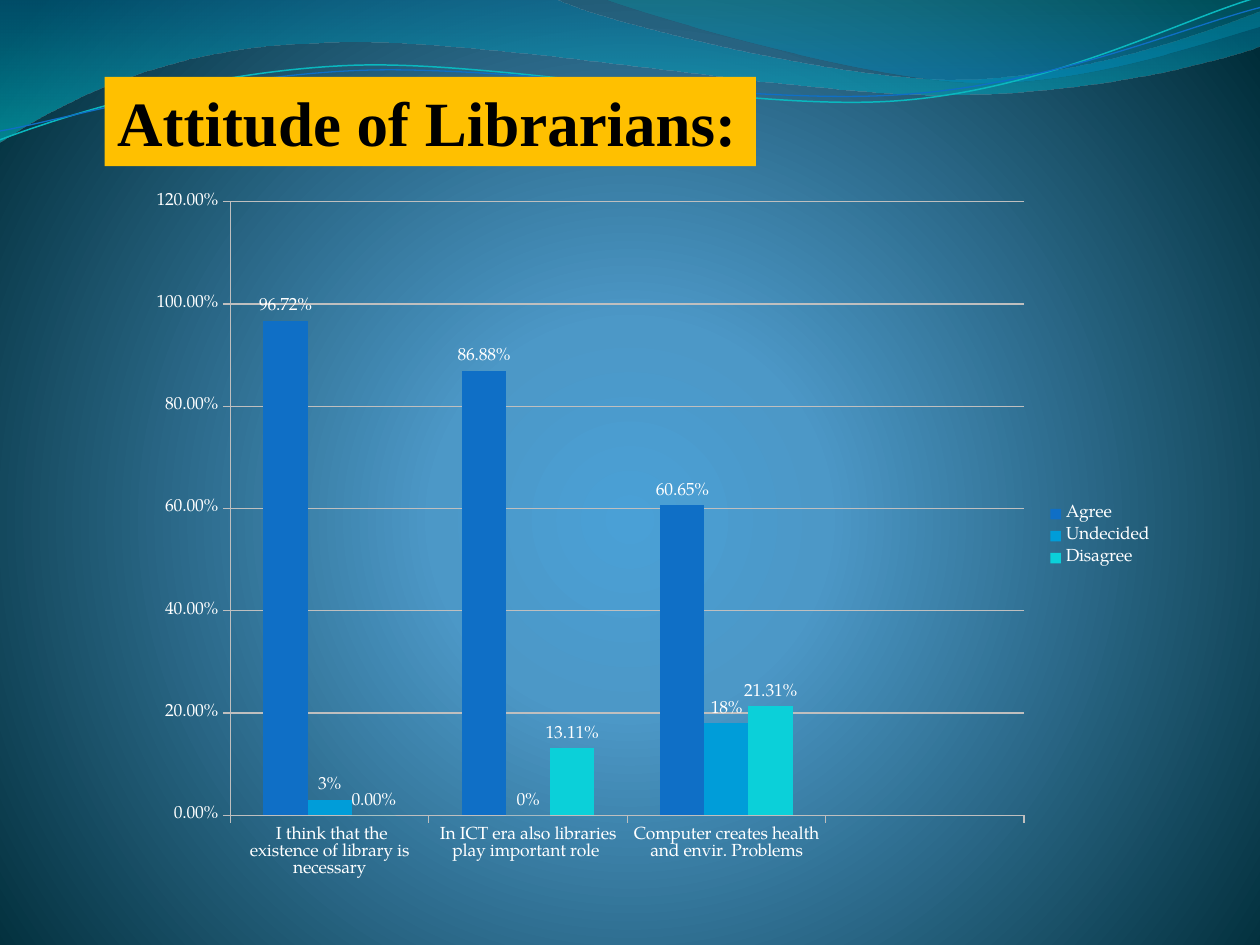
from lxml.etree import SubElement
from pptx import Presentation
from pptx.chart.data import CategoryChartData
from pptx.dml.color import RGBColor
from pptx.enum.chart import XL_CHART_TYPE, XL_LABEL_POSITION, XL_LEGEND_POSITION, XL_TICK_MARK
from pptx.enum.text import MSO_ANCHOR, MSO_AUTO_SIZE, PP_ALIGN
from pptx.oxml.ns import qn
from pptx.util import Inches, Pt

BLACK = RGBColor(0x00, 0x00, 0x00)
WHITE = RGBColor(0xFF, 0xFF, 0xFF)
AMBER = RGBColor(0xFF, 0xC0, 0x00)
GRID = RGBColor(0xBF, 0xBF, 0xBF)
BLUE = RGBColor(0x0F, 0x6F, 0xC6)
SKY = RGBColor(0x00, 0x9D, 0xD9)
AQUA = RGBColor(0x0B, 0xD0, 0xD9)
TEAL = RGBColor(0x0A, 0xB8, 0xBF)
GLOW = RGBColor(0x4A, 0xA0, 0xD6)
HAZE = RGBColor(0x4C, 0x98, 0xC7)
DEEP = RGBColor(0x00, 0x2C, 0x38)
WAVE_TOP = RGBColor(0x00, 0x74, 0xA1)
WAVE_BOTTOM = RGBColor(0x00, 0xC6, 0xCF)
CREST_TOP = RGBColor(0x00, 0xA1, 0xA9)
CREST_BOTTOM = RGBColor(0x00, 0x8B, 0xBF)

TITLE = "Attitude of Librarians:"
BODY_FONT = "TeX Gyre Pagella"
CATEGORIES = [
    " I think that the existence of library is necessary",
    "In ICT era also libraries play important role ",
    "Computer creates health and envir. Problems",
    "",
]
SERIES = [
    ("Agree", [0.9672, 0.8688, 0.6065, None], BLUE, "0.00%"),
    ("Undecided", [0.03, 0, 0.18, None], SKY, "0%"),
    ("Disagree", [0, 0.1311, 0.2131, None], AQUA, "0.00%"),
]
BACKGROUND = [(0, GLOW, 100), (25, HAZE, 100), (100, DEEP, 100)]
UNITS_PER_INCH = 100
BANDS = [
    ([[(0, 0)], [(4.4, -0.01)],
      [(4.76, 0.17), (6.64, 0.63), (7.58, 0.63)],
      [(8.53, 0.63), (9.58, 0.26), (10, 0.09)], [(10.01, 0.36)],
      [(9.83, 0.44), (8.7, 0.76), (7.46, 0.75)],
      [(6.22, 0.75), (3.82, 0.28), (2.57, 0.34)],
      [(1.29, 0.36), (0.46, 0.83), (-0.01, 1.13)]],
     [(0, WAVE_TOP, 45), (100, WAVE_BOTTOM, 55)]),
    ([[(4.79, -0.01)],
      [(5.09, 0.11), (6.82, 0.62), (7.69, 0.65)],
      [(8.56, 0.69), (9.61, 0.32), (10, 0.21)], [(10, 0)]],
     [(0, CREST_TOP, 30), (80, CREST_BOTTOM, 45)]),
]
STRANDS = [
    ([[(0, 1.11)],
      [(0.48, 0.93), (1.58, 0.57), (2.77, 0.52)],
      [(3.95, 0.47), (5.93, 0.89), (7.13, 0.8)],
      [(8.33, 0.71), (9.38, 0.15), (9.98, -0.02)]], TEAL, 0.85),
    ([[(0, 1.04)],
      [(0.47, 0.96), (1.64, 0.61), (2.83, 0.56)],
      [(4.03, 0.51), (5.97, 0.84), (7.17, 0.75)],
      [(8.36, 0.67), (9.41, 0.21), (10, 0.06)]], BLUE, 0.75),
]


def paint_gradient(owner, stops, circle=None):
    """Turn the owner's first solid fill into a linear or circular gradient."""
    solid = next(owner.iter(qn("a:solidFill")))
    parent = solid.getparent()
    gradient = SubElement(parent, qn("a:gradFill"), rotWithShape="1")
    parent.replace(solid, gradient)
    stop_list = SubElement(gradient, qn("a:gsLst"))
    for position, color, opacity in stops:
        stop = SubElement(stop_list, qn("a:gs"), pos=str(position * 1000))
        tint = SubElement(stop, qn("a:srgbClr"), val=str(color))
        SubElement(tint, qn("a:alpha"), val=str(opacity * 1000))
    if circle:
        ring = SubElement(gradient, qn("a:path"), path="circle")
        edges = {side: str(share * 1000) for side, share in zip("ltrb", circle)}
        SubElement(ring, qn("a:fillToRect"), **edges)
    else:
        SubElement(gradient, qn("a:lin"), ang="5400000", scaled="0")


def add_curve(page, steps, close):
    """Draw an outline whose three-point steps are Bezier curves."""
    start, *points = [(round(x * UNITS_PER_INCH), round(y * UNITS_PER_INCH))
                      for step in steps for x, y in step]
    builder = page.shapes.build_freeform(*start, scale=Inches(1) / UNITS_PER_INCH)
    builder.add_line_segments(points, close=close)
    shape = builder.convert_to_shape()
    shape.shadow.inherit = False
    lines = list(shape._element.iter(qn("a:lnTo")))
    for step in steps[1:]:
        parts, lines = lines[:len(step)], lines[len(step):]
        if len(step) == 3:
            parent = parts[0].getparent()
            curve = SubElement(parent, qn("a:cubicBezTo"))
            parent.replace(parts[0], curve)
            for part in parts:
                curve.append(part[0])
            for part in parts[1:]:
                parent.remove(part)
    return shape


def add_waves(page):
    """Add the translucent bands and thin strands along the top."""
    for outline, stops in BANDS:
        band = add_curve(page, outline, close=True)
        band.fill.solid()
        paint_gradient(band._element, stops)
        band.line.fill.background()
    for outline, color, width in STRANDS:
        strand = add_curve(page, outline, close=False)
        strand.fill.background()
        strand.line.color.rgb = color
        strand.line.width = Pt(width)


def format_font(font, name=BODY_FONT, size=10, color=WHITE, bold=False):
    """Set the face, size, colour and weight of a font."""
    font.name, font.size, font.bold = name, Pt(size), bold
    font.color.rgb = color


def add_attitude_chart(page):
    """Add the clustered columns of answers."""
    data = CategoryChartData()
    data.categories = CATEGORIES
    for name, values, _, number_format in SERIES:
        data.add_series(name, values, number_format)
    area = [Inches(length) for length in (1.08, 1.42, 8.17, 5.67)]
    chart = page.shapes.add_chart(XL_CHART_TYPE.COLUMN_CLUSTERED, *area, data).chart
    format_font(chart.font)
    chart.has_title = False
    chart.has_legend = True
    chart.legend.position = XL_LEGEND_POSITION.RIGHT
    chart.legend.include_in_layout = False
    plot = chart.plots[0]
    plot.gap_width, plot.overlap, plot.vary_by_categories = 150, 0, False
    for series, (_, _, color, number_format) in zip(plot.series, SERIES):
        series.format.fill.solid()
        series.format.fill.fore_color.rgb = color
        labels = series.data_labels
        labels.show_value = True
        labels.number_format, labels.number_format_is_linked = number_format, False
        labels.position = XL_LABEL_POSITION.OUTSIDE_END
        format_font(labels.font)
    scale = chart.value_axis
    scale.minimum_scale, scale.maximum_scale, scale.major_unit = 0, 1.2, 0.2
    scale.tick_labels.number_format = "0.00%"
    scale.tick_labels.number_format_is_linked = False
    scale.has_major_gridlines = True
    for axis in (scale, chart.category_axis):
        axis.major_tick_mark, axis.minor_tick_mark = XL_TICK_MARK.OUTSIDE, XL_TICK_MARK.NONE
    for part in (scale, scale.major_gridlines, chart.category_axis):
        part.format.line.color.rgb = GRID
        part.format.line.width = Pt(0.75)


def add_title(page):
    """Place the amber title in front of the waves."""
    title = page.shapes.title
    title.left, title.top, title.width, title.height = map(Inches, (0.83, 0.61, 5.17, 0.71))
    title.fill.solid()
    title.fill.fore_color.rgb = AMBER
    frame = title.text_frame
    frame.text = TITLE
    frame.word_wrap = False
    frame.auto_size = MSO_AUTO_SIZE.NONE
    frame.vertical_anchor = MSO_ANCHOR.TOP
    para = frame.paragraphs[0]
    para.alignment = PP_ALIGN.LEFT
    format_font(para.runs[0].font, name="Times New Roman", size=36, color=BLACK, bold=True)
    page.shapes._spTree.append(title._element)


def main():
    """Build and save the slide."""
    deck = Presentation()
    deck.slide_width, deck.slide_height = Inches(10), Inches(7.5)
    page = deck.slides.add_slide(deck.slide_layouts[5])
    page.background.fill.solid()
    paint_gradient(page._element, BACKGROUND, circle=(10, 110, 10, 100))
    add_waves(page)
    add_attitude_chart(page)
    add_title(page)
    deck.save("out.pptx")


if __name__ == "__main__":
    main()
